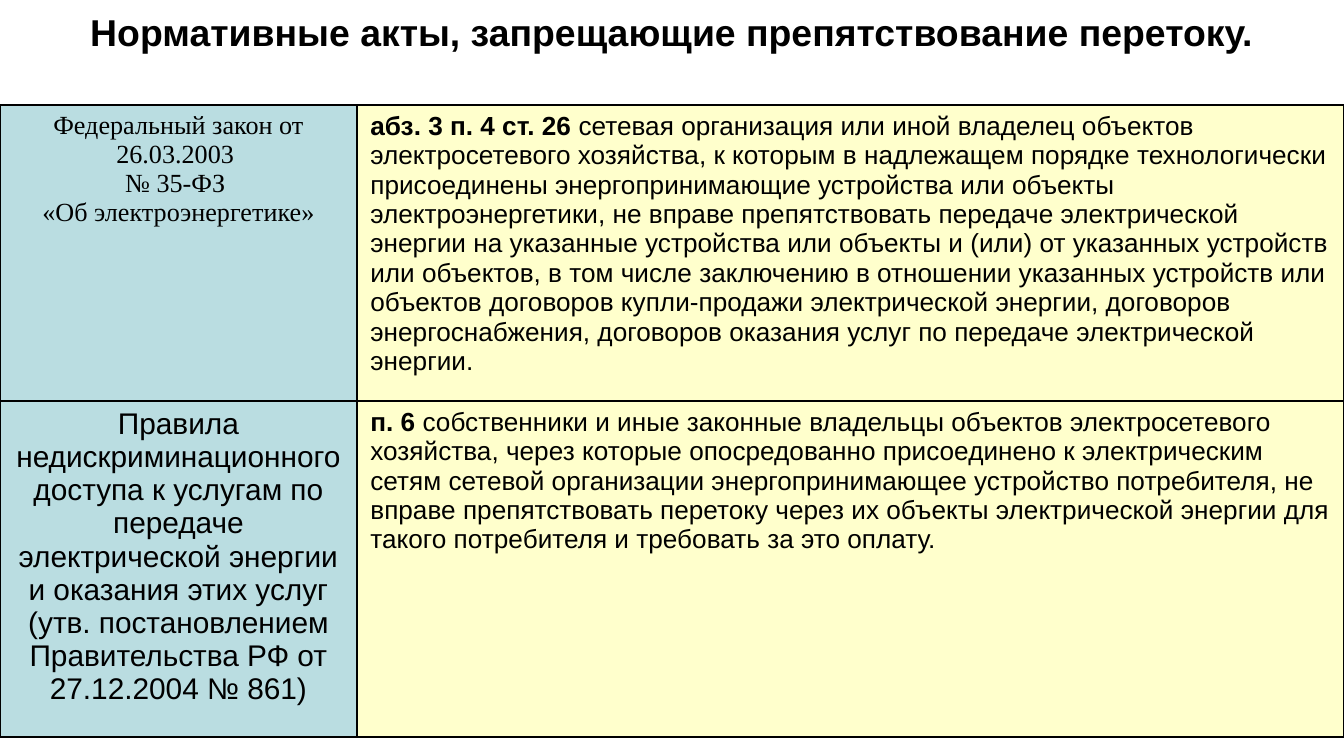
import pptx
import pptx.util
import pptx.dml.color
import pptx.enum.text
import pptx.oxml.ns
import lxml.etree

Pt = pptx.util.Pt
ALIGN = pptx.enum.text.PP_ALIGN
ANCHOR = pptx.enum.text.MSO_ANCHOR
THEME = {
    "ink": "000000", "act": "BADDE1", "norm": "FFFFCC",
    "title": 20, "body": 14, "large": 16, "border": 1,
    "sans": "Arial", "serif": "Times New Roman",
}


def rgb(name):
    return pptx.dml.color.RGBColor.from_string(THEME[name])


def add_run(p, text, size, font="sans", bold=False):
    r = p.add_run()
    r.text = text
    r.font.size = Pt(THEME[size])
    r.font.name = THEME[font]
    r.font.bold = bold
    r.font.color.rgb = rgb("ink")


# A 16:9 slide on a grid of 64 columns and 36 rows
prs = pptx.Presentation()
prs.slide_width = pptx.util.Inches(10)
prs.slide_height = prs.slide_width * 9 // 16
W, H = prs.slide_width, prs.slide_height
COL, ROW = W // 64, H // 36
s = prs.slides.add_slide(prs.slide_layouts[6])

# Title across the top
tf = s.shapes.add_textbox(0, 0, W, 3 * ROW).text_frame
tf.word_wrap = True
tf.vertical_anchor = ANCHOR.MIDDLE
p = tf.paragraphs[0]
p.alignment = ALIGN.CENTER
add_run(p, "Нормативные акты, запрещающие препятствование перетоку.", "title", bold=True)

# Each row: height, act lines, their font and size, clause number, clause text
rows = [
    (14, ["Федеральный закон от 26.03.2003 ", "№ 35-ФЗ ", "«Об электроэнергетике»"],
     "serif", "body", "абз. 3 п. 4 ст. 26 ",
     "сетевая организация или иной владелец объектов электросетевого хозяйства, "
     "к которым в надлежащем порядке технологически присоединены энергопринимающие "
     "устройства или объекты электроэнергетики, не вправе препятствовать передаче "
     "электрической энергии на указанные устройства или объекты и (или) от указанных "
     "устройств или объектов, в том числе заключению в отношении указанных устройств "
     "или объектов договоров купли-продажи электрической энергии, договоров "
     "энергоснабжения, договоров оказания услуг по передаче электрической энергии."),
    (14.5, ["Правила недискриминационного доступа к услугам по передаче электрической энергии "
            "и оказания этих услуг (утв. постановлением Правительства РФ от 27.12.2004 № 861)"],
     "sans", "large", "п. 6 ",
     "собственники и иные законные владельцы объектов электросетевого хозяйства, "
     "через которые опосредованно присоединено к электрическим сетям сетевой "
     "организации энергопринимающее устройство потребителя, не вправе препятствовать "
     "перетоку через их объекты электрической энергии для такого потребителя и "
     "требовать за это оплату."),
]

# Table of acts and clauses
frame = s.shapes.add_table(len(rows), 2, 0, 5 * ROW, W, 30 * ROW)
table = frame.table
table.first_row = table.horz_banding = False
table.columns[0].width = 17 * COL
table.columns[1].width = 47 * COL

for i, (height, act, font, size, clause, text) in enumerate(rows):
    table.rows[i].height = int(height * ROW)
    left, right = table.cell(i, 0), table.cell(i, 1)
    for j, line in enumerate(act):
        p = left.text_frame.paragraphs[0] if j == 0 else left.text_frame.add_paragraph()
        p.alignment = ALIGN.CENTER
        add_run(p, line, size, font)
    p = right.text_frame.paragraphs[0]
    add_run(p, clause, "body", bold=True)
    add_run(p, text, "body")

    # Borders come before the fill in the cell properties
    for cell, fill in ((left, "act"), (right, "norm")):
        tc_pr = cell._tc.get_or_add_tcPr()
        for side in ("lnL", "lnR", "lnT", "lnB"):
            ln = lxml.etree.SubElement(tc_pr, pptx.oxml.ns.qn("a:" + side),
                                       w=str(Pt(THEME["border"])))
            solid = lxml.etree.SubElement(ln, pptx.oxml.ns.qn("a:solidFill"))
            lxml.etree.SubElement(solid, pptx.oxml.ns.qn("a:srgbClr"), val=THEME["ink"])
        cell.fill.solid()
        cell.fill.fore_color.rgb = rgb(fill)

# Room for the last row to grow with its text
frame.height = 30 * ROW

prs.save("out.pptx")
